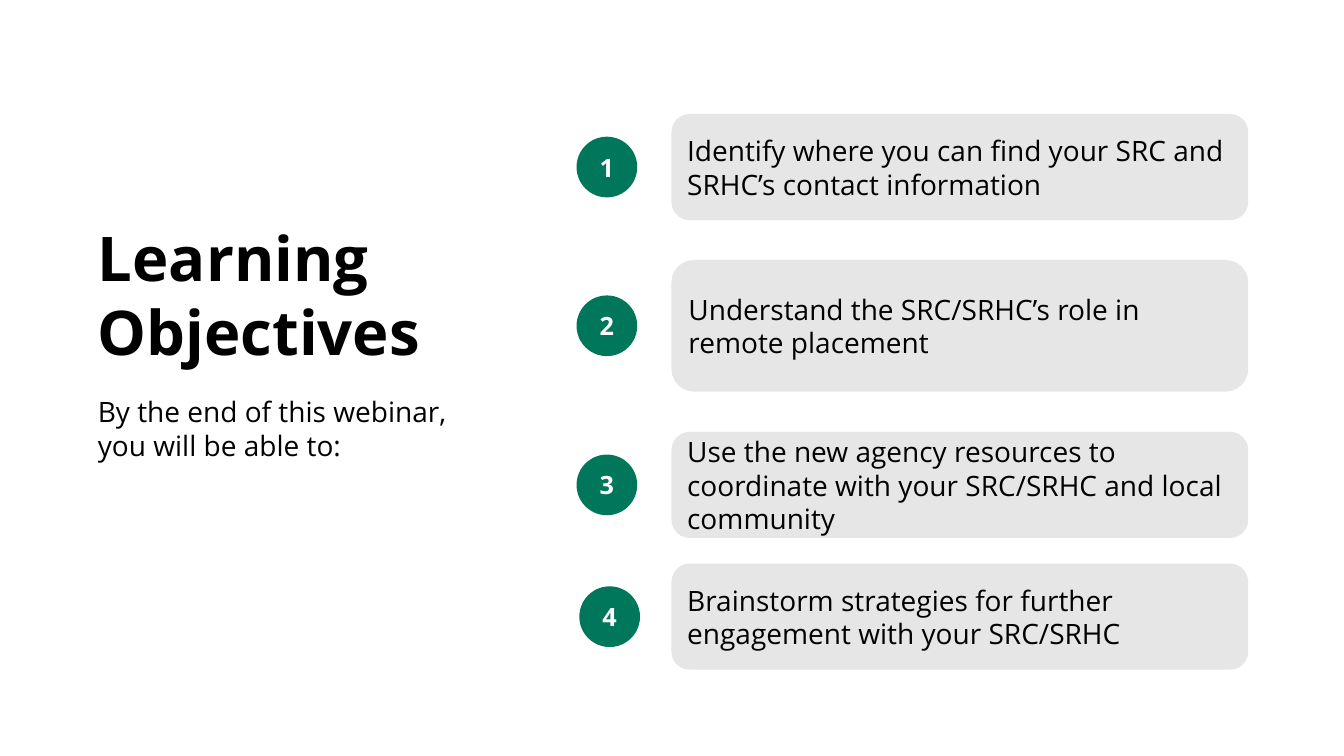
from pptx import Presentation
from pptx.dml.color import RGBColor
from pptx.enum import shapes, text
from pptx.util import Cm, Pt

FONT = "Open Sans"
GREEN, GREY, BLACK, WHITE = "00765A", "E7E6E6", "000000", "FFFFFF"
BADGE_SIZE = 1.53
CARD_LEFT, CARD_WIDTH = 16.94, 14.5
OBJECTIVES = [
    (14.53, 2.89, 2.64, "Identify where you can find your SRC and SRHC’s contact information"),
    (14.53, 6.57, 3.28, "Understand the SRC/SRHC’s role in remote placement"),
    (14.53, 10.9, 2.64, "Use the new agency resources to coordinate with your SRC/SRHC and local community"),
    (14.6, 14.22, 2.64, "Brainstorm strategies for further engagement with your SRC/SRHC"),
]


def color(value):
    """Turn a hex string into a colour."""
    return RGBColor.from_string(value)


def write(shape, words, size, ink, bold=False, align=text.PP_ALIGN.LEFT,
          anchor=text.MSO_ANCHOR.MIDDLE):
    """Fill a shape with evenly formatted paragraphs."""
    frame = shape.text_frame
    frame.word_wrap = True
    frame.auto_size = text.MSO_AUTO_SIZE.NONE
    frame.vertical_anchor = anchor
    frame.text = words
    for para in frame.paragraphs:
        para.alignment = align
        para.space_before = Pt(0)
        para.font.name = FONT
        para.font.size = Pt(size)
        para.font.bold = bold
        para.font.color.rgb = color(ink)


def add_block(page, kind, left, top, width, height, fill):
    """Add a flat preset shape in one colour."""
    block = page.shapes.add_shape(kind, Cm(left), Cm(top), Cm(width), Cm(height))
    block.shadow.inherit = False
    block.fill.solid()
    block.fill.fore_color.rgb = color(fill)
    block.line.color.rgb = color(fill)
    block.line.width = Pt(1)
    return block


def add_heading(page, left, top):
    """Place the title and the lead-in below it."""
    title, lead = page.shapes.title, page.placeholders[1]
    parts = [
        (title, 0, 9.83, 4.01, "Learning\nObjectives", 44, True),
        (lead, 4.41, 10.59, 1.96, "By the end of this webinar, you will be able to:", 20, False),
    ]
    for box, offset, width, height, words, size, bold in parts:
        box.left, box.top = Cm(left), Cm(top + offset)
        box.width, box.height = Cm(width), Cm(height)
        write(box, words, size, BLACK, bold, anchor=text.MSO_ANCHOR.TOP)


def add_objective(page, number, badge_left, top, height, words):
    """Place a numbered badge centred beside its card."""
    badge_top = top + (height - BADGE_SIZE) / 2
    badge = add_block(page, shapes.MSO_SHAPE.OVAL, badge_left, badge_top,
                      BADGE_SIZE, BADGE_SIZE, GREEN)
    badge.line.fill.background()
    write(badge, str(number), 18, WHITE, True, text.PP_ALIGN.CENTER)
    card = add_block(page, shapes.MSO_SHAPE.ROUNDED_RECTANGLE, CARD_LEFT, top,
                     CARD_WIDTH, height, GREY)
    write(card, words, 20, BLACK)


def main():
    """Build and save the learning objectives slide."""
    deck = Presentation()
    deck.slide_width, deck.slide_height = Cm(33.87), Cm(19.05)
    page = deck.slides.add_slide(deck.slide_layouts[0])
    add_heading(page, 2.21, 5.41)
    for number, objective in enumerate(OBJECTIVES, 1):
        add_objective(page, number, *objective)
    deck.save("out.pptx")


if __name__ == "__main__":
    main()
